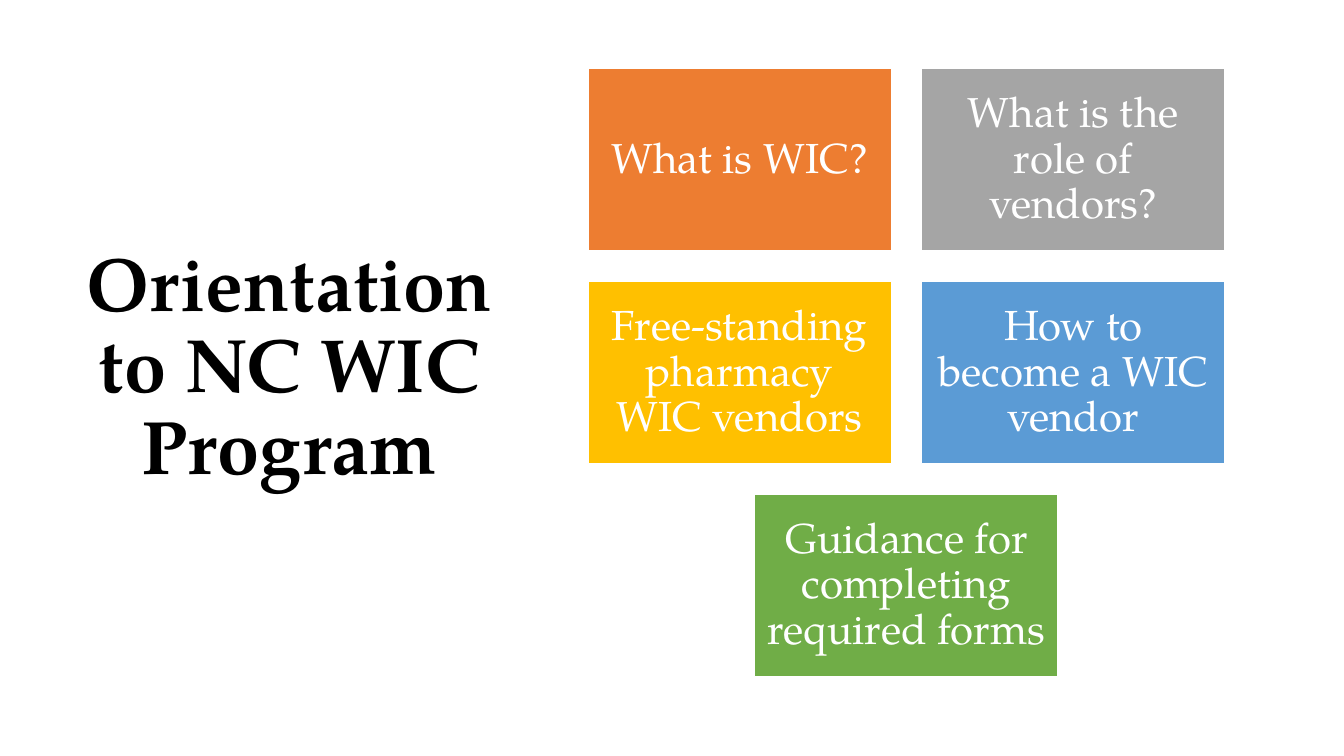
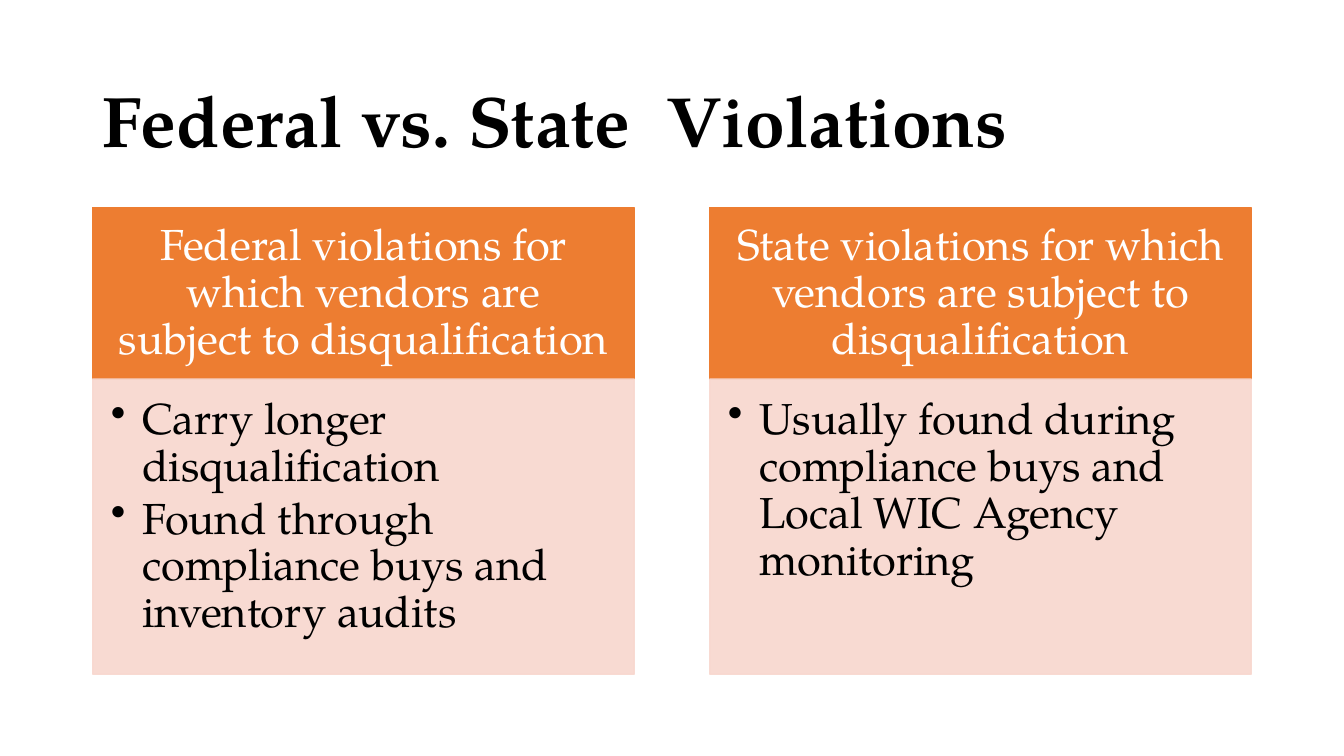
import pptx
import pptx.dml.color
import pptx.enum.shapes
import pptx.enum.text
import pptx.oxml.ns
import pptx.util
from lxml import etree

Inches = pptx.util.Inches
Pt = pptx.util.Pt
ALIGN = pptx.enum.text.PP_ALIGN
ANCHOR = pptx.enum.text.MSO_ANCHOR

FONT = "TeX Gyre Pagella"
BLACK, WHITE = "000000", "FFFFFF"
ORANGE, GRAY, GOLD, BLUE, GREEN = "ED7D31", "A5A5A5", "FFC000", "5B9BD5", "70AD47"
PINK = "F8D7CE"

TOPICS = [
    ("What is WIC?", ORANGE),
    ("What is the role of vendors?", GRAY),
    ("Free-standing pharmacy WIC vendors", GOLD),
    ("How to become a WIC vendor", BLUE),
    ("Guidance for completing required forms", GREEN),
]
COLUMNS = [
    ("Federal violations for which vendors are subject to disqualification",
     ["Carry longer disqualification",
      "Found through compliance buys and inventory audits"]),
    ("State violations for which vendors are subject to disqualification",
     ["Usually found during compliance buys and Local WIC Agency monitoring"]),
]


def rgb(code):
    return pptx.dml.color.RGBColor.from_string(code)


def add_child(parent, tag, **attrs):
    return etree.SubElement(parent, pptx.oxml.ns.qn(tag), **attrs)


def write(shape, lines, size, color, align=ALIGN.CENTER, anchor=ANCHOR.MIDDLE,
          inset=(0.1, 0.05, 0.1, 0.05), bold=False, gap=0):
    """Fill the shape with one paragraph per line; inset is left, top, right, bottom."""
    frame = shape.text_frame
    frame.word_wrap = True
    frame.vertical_anchor = anchor
    (frame.margin_left, frame.margin_top,
     frame.margin_right, frame.margin_bottom) = map(Inches, inset)
    frame.text = "\n".join(lines)
    for para in frame.paragraphs:
        para.alignment = align
        para.line_spacing = 0.9
        para.space_after = Pt(gap)
        para.font.name = FONT
        para.font.size = Pt(size)
        para.font.bold = bold
        para.font.color.rgb = rgb(color)


def add_title(slide, text, box, size, align):
    shape = slide.shapes.add_textbox(*map(Inches, box))
    write(shape, [text], size, BLACK, align, bold=True)


def add_box(slide, box, fill, line):
    shape = slide.shapes.add_shape(
        pptx.enum.shapes.MSO_SHAPE.RECTANGLE, *map(Inches, box))
    shape.shadow.inherit = False
    shape.fill.solid()
    shape.fill.fore_color.rgb = rgb(fill)
    shape.line.color.rgb = rgb(line)
    shape.line.width = Pt(1)
    return shape


def fade(shape, percent):
    """Set the opacity of the shape's fill and line."""
    for color in shape.element.spPr.iter(pptx.oxml.ns.qn("a:srgbClr")):
        add_child(color, "a:alpha", val=str(percent * 1000))


def add_bullets(shape, indent):
    for para in shape.text_frame.paragraphs:
        props = para._p.get_or_add_pPr()
        props.set("marL", str(Inches(indent)))
        props.set("indent", str(-Inches(indent)))
        mark = etree.Element(pptx.oxml.ns.qn("a:buChar"), char="•")
        props.find(pptx.oxml.ns.qn("a:defRPr")).addprevious(mark)


def add_cards(slide, topics):
    """Lay cards out two to a row, with a lone last card centred."""
    left, top, width, height, gap = 5.83, 0.68, 3.01, 1.81, 0.3
    for i, (text, fill) in enumerate(topics):
        row, col = divmod(i, 2)
        if col == 0 and i == len(topics) - 1:
            col = 0.5
        box = (left + col * (width + gap), top + row * (height + gap), width, height)
        card = add_box(slide, box, fill, WHITE)
        write(card, [text], 30, WHITE, inset=(0.12,) * 4)


def add_column(slide, left, heading, points):
    top, width, head, body = 2.06, 5.37, 1.7, 2.93
    banner = add_box(slide, (left, top, width, head), ORANGE, ORANGE)
    write(banner, [heading], 31, WHITE, inset=(0.24, 0.14, 0.24, 0.14))
    panel = add_box(slide, (left, top + head, width, body), PINK, PINK)
    fade(panel, 90)
    write(panel, points, 31, BLACK, ALIGN.LEFT, ANCHOR.TOP,
          (0.18, 0.18, 0.24, 0.27), gap=4)
    add_bullets(panel, 0.31)


def main():
    deck = pptx.Presentation()
    deck.slide_width, deck.slide_height = Inches(13.33), Inches(7.5)
    blank = deck.slide_layouts[6]

    agenda = deck.slides.add_slide(blank)
    add_title(agenda, "Orientation to NC WIC Program",
              (0.41, 0.61, 4.92, 6.09), 54, ALIGN.CENTER)
    add_cards(agenda, TOPICS)

    compare = deck.slides.add_slide(blank)
    add_title(compare, "Federal vs. State  Violations",
              (0.92, 0.61, 11.5, 1.24), 51, ALIGN.LEFT)
    for i, (heading, points) in enumerate(COLUMNS):
        add_column(compare, 0.92 + i * 6.12, heading, points)

    deck.save("out.pptx")


if __name__ == "__main__":
    main()
